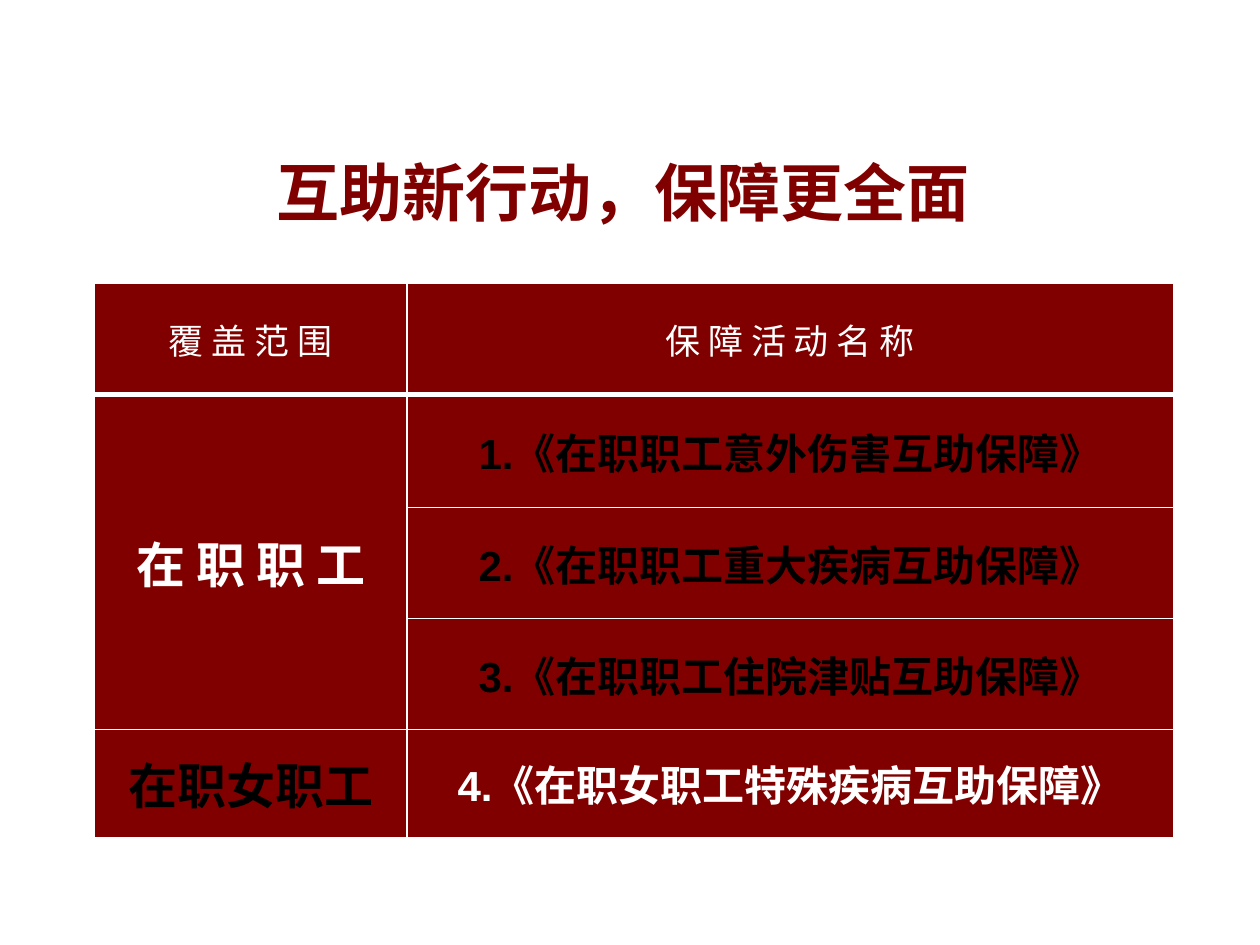
from lxml import etree
from pptx import Presentation
from pptx.dml.color import RGBColor
from pptx.enum import text
from pptx.oxml import ns
from pptx.util import Pt

RED, WHITE, BLACK = "800000", "FFFFFF", "000000"
HAN = "Noto Sans CJK SC"
COLS = [178.5, 438]
ROWS = [63.5, 64.5, 63.5, 63.5, 61.5]

# Row, column, words, size, colour, bold
CELLS = [
    (0, 0, "覆 盖 范 围", 20, WHITE, False),
    (0, 1, "保 障 活 动 名 称", 20, WHITE, False),
    (1, 0, "在 职 职 工", 28, WHITE, True),
    (1, 1, "1.《在职职工意外伤害互助保障》", 24, BLACK, True),
    (2, 1, "2.《在职职工重大疾病互助保障》", 24, BLACK, True),
    (3, 1, "3.《在职职工住院津贴互助保障》", 24, BLACK, True),
    (4, 0, "在职女职工", 28, BLACK, True),
    (4, 1, "4.《在职女职工特殊疾病互助保障》", 24, WHITE, True),
]


def color(hexa):
    return RGBColor.from_string(hexa)


def write(frame, words, size, hue, bold, face):
    frame.vertical_anchor = text.MSO_ANCHOR.MIDDLE
    para = frame.paragraphs[0]
    para.alignment = text.PP_ALIGN.CENTER
    run = para.add_run()
    run.text = words
    font = run.font
    font.size, font.bold, font.name = Pt(size), bold, face
    font.color.rgb = color(hue)
    # East Asian typeface
    east = etree.SubElement(font._element, ns.qn("a:ea"))
    east.set("typeface", HAN)
    return para


def border(cell, side, width):
    props = cell._tc.get_or_add_tcPr()
    line = etree.SubElement(props, ns.qn("a:ln" + side), w=str(Pt(width)))
    fill = etree.SubElement(line, ns.qn("a:solidFill"))
    etree.SubElement(fill, ns.qn("a:srgbClr"), val=WHITE)


def add_title(slide, left, top, width, height):
    title = slide.shapes.title
    title.left, title.top = Pt(left), Pt(top)
    title.width, title.height = Pt(width), Pt(height)
    frame = title.text_frame
    frame.word_wrap = True
    frame.auto_size = text.MSO_AUTO_SIZE.NONE
    para = write(frame, "互助新行动，保障更全面", 36, RED, True, HAN)
    para.line_spacing = 1.2


def add_plans(slide, left, top, width, height):
    table = slide.shapes.add_table(
        len(ROWS), len(COLS), Pt(left), Pt(top), Pt(width), Pt(height)
    ).table
    # Grid, scaled to the box
    for col, part in zip(table.columns, COLS):
        col.width = Pt(width * part / sum(COLS))
    for row, part in zip(table.rows, ROWS):
        row.height = Pt(height * part / sum(ROWS))
    # Borders and fills, with a heavier rule under the header
    for r, row in enumerate(table.rows):
        for cell in row.cells:
            for side in "LRTB":
                border(cell, side, 3 if r == 0 and side == "B" else 1)
            cell.fill.solid()
            cell.fill.fore_color.rgb = color(RED)
    # One group covers the first three plans
    table.cell(1, 0).merge(table.cell(3, 0))
    for r, c, words, size, hue, bold in CELLS:
        cell = table.cell(r, c)
        write(cell.text_frame, words, size, hue, bold, "Arial")
        cell.vertical_anchor = text.MSO_ANCHOR.MIDDLE


def main():
    deck = Presentation()
    deck.slide_width, deck.slide_height = Pt(720), Pt(540)
    slide = deck.slides.add_slide(deck.slide_layouts[5])
    add_title(slide, 48, 77, 616.5, 56)
    add_plans(slide, 54, 162, 616.5, 316.5)
    deck.save("out.pptx")


if __name__ == "__main__":
    main()
